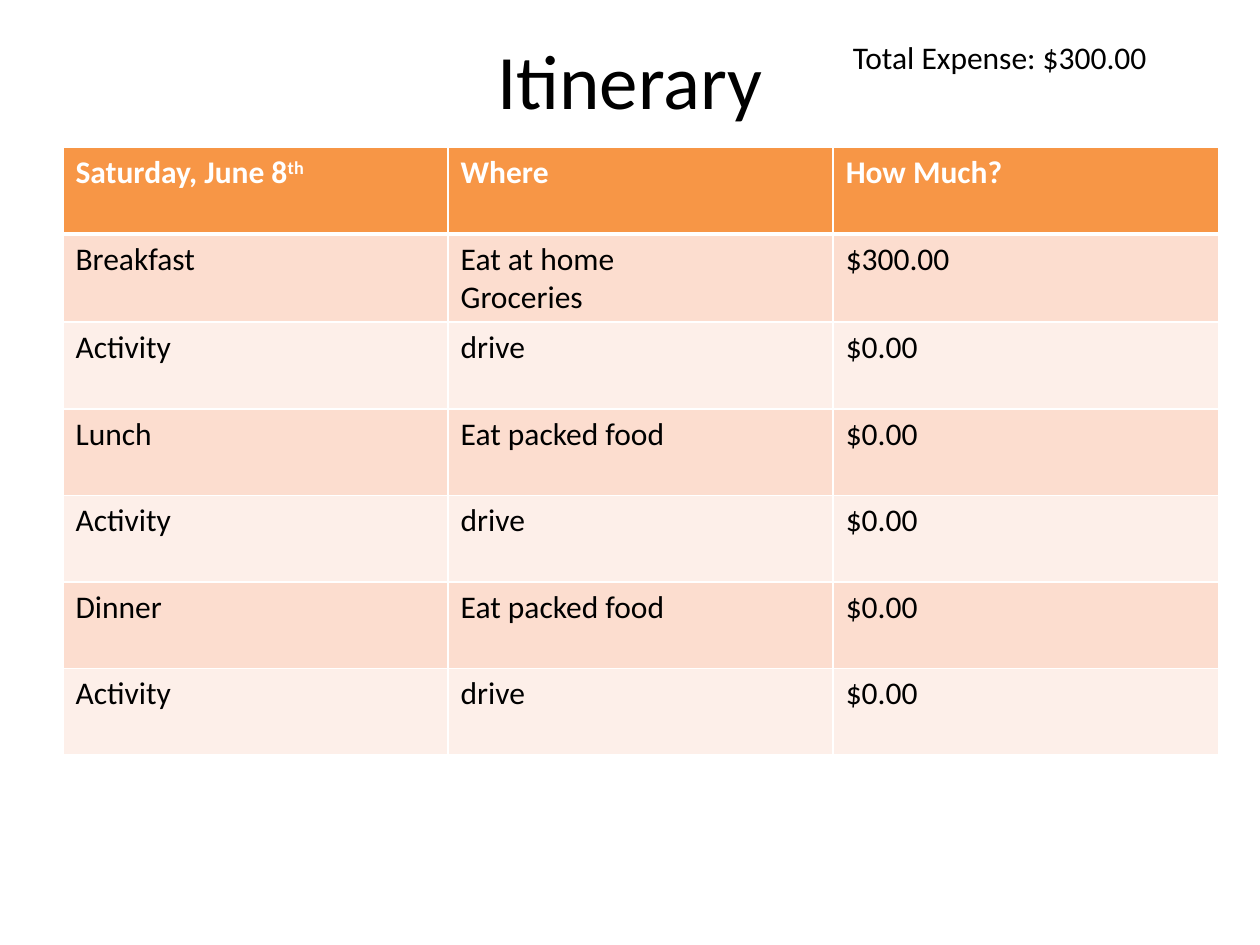
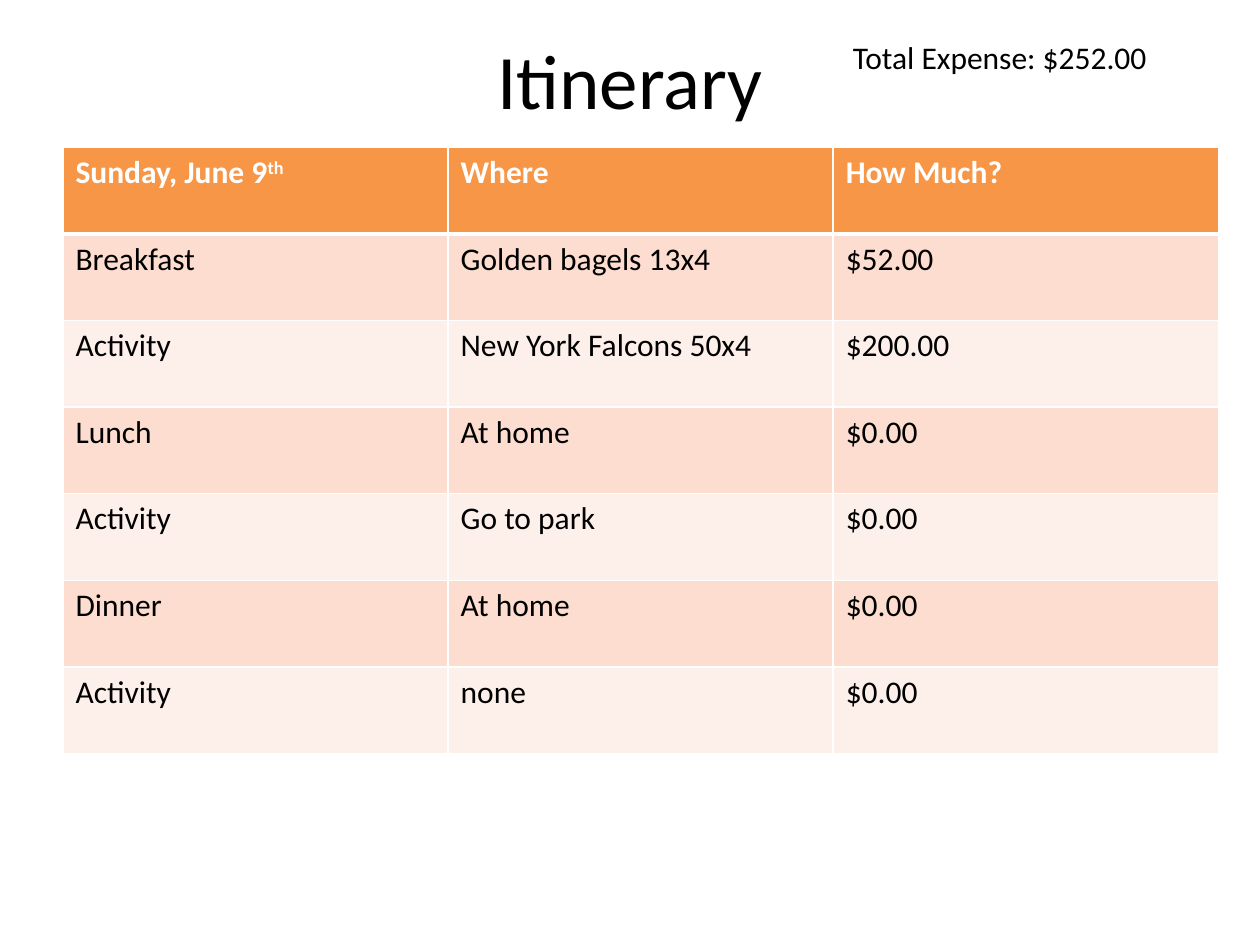
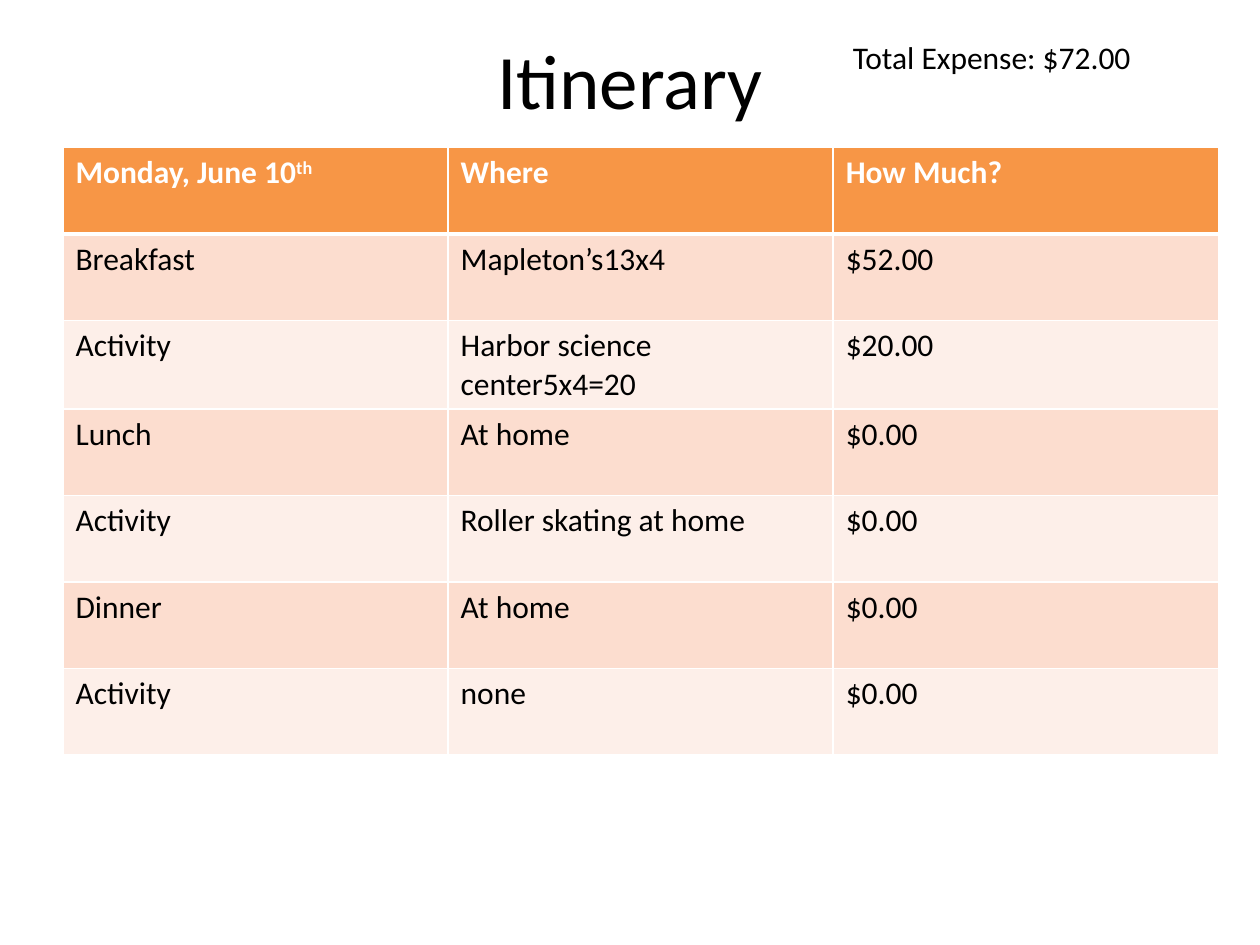
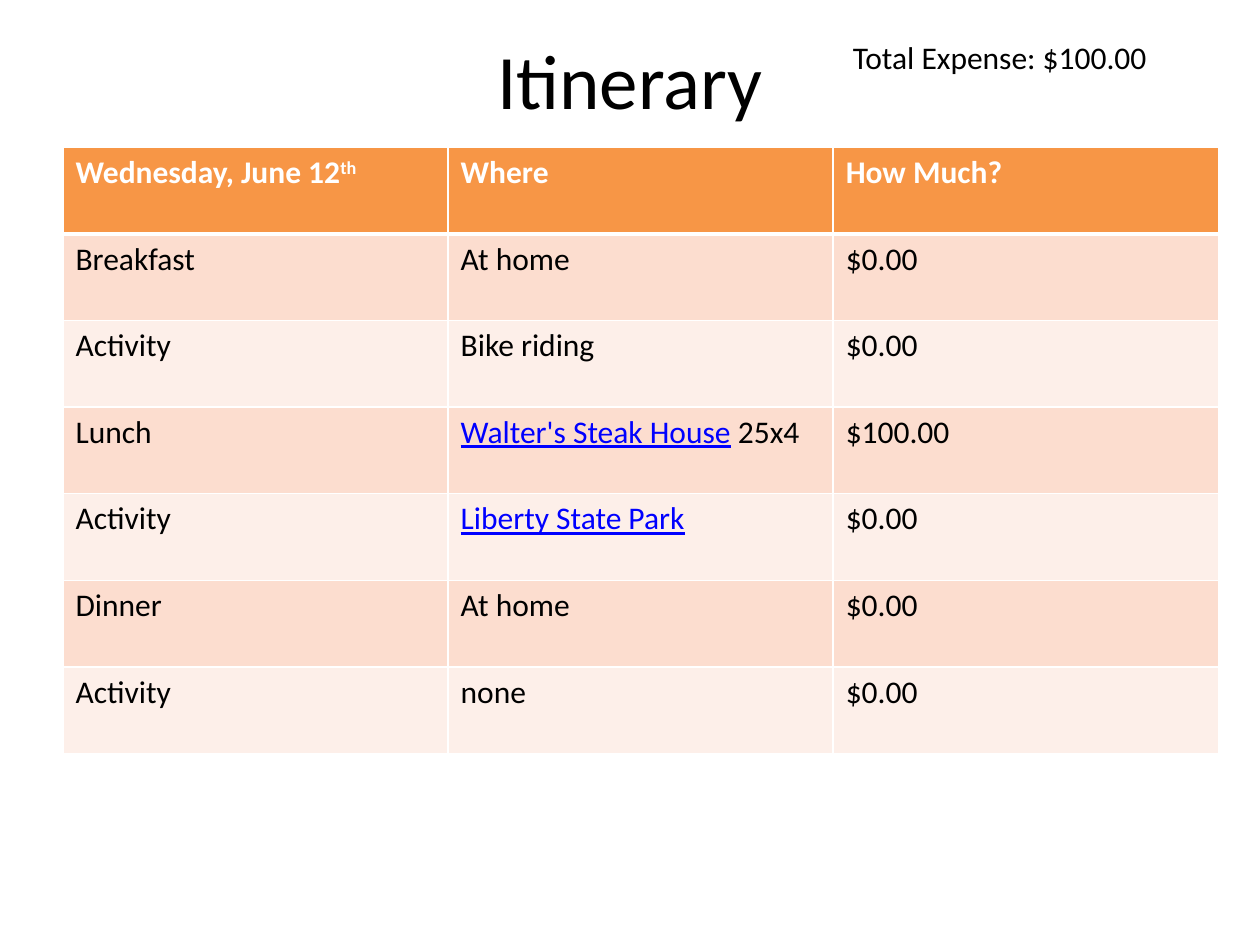
from dataclasses import dataclass

from lxml.etree import SubElement
from pptx import Presentation
from pptx.dml.color import RGBColor
from pptx.enum.text import MSO_ANCHOR, MSO_AUTO_SIZE, PP_ALIGN
from pptx.oxml.ns import qn
from pptx.util import Emu, Pt

BLACK = RGBColor(0x00, 0x00, 0x00)
WHITE = RGBColor(0xFF, 0xFF, 0xFF)
ORANGE = RGBColor(0xF7, 0x96, 0x46)
PEACH = RGBColor(0xFC, 0xDD, 0xCF)
PALE = RGBColor(0xFD, 0xEF, 0xE9)
LINK_BLUE = RGBColor(0x00, 0x00, 0xFF)

FONT = "Calibri"
EMU_PER_PX = 9144
BLANK_LAYOUT = 6
SLOTS = ("Breakfast", "Activity", "Lunch", "Activity", "Dinner", "Activity")


@dataclass(frozen=True)
class Box:
    left: int
    top: int
    width: int
    height: int

    def emu(self) -> tuple[Emu, ...]:
        return tuple(px(n) for n in (self.left, self.top, self.width, self.height))


@dataclass(frozen=True)
class Run:
    text: str
    size: int = 18
    color: RGBColor = BLACK
    bold: bool = False
    underline: bool = False
    raised: bool = False


@dataclass(frozen=True)
class Stop:
    where: tuple[tuple[Run, ...], ...]
    cost: int = 0


@dataclass(frozen=True)
class Day:
    date: str
    stops: tuple[Stop, ...]


TITLE_BOX = Box(50, 0, 900, 125)
TOTAL_BOX = Box(667, 25, 308, 40)
TABLE_BOX = Box(50, 117, 917, 481)


def px(n: int) -> Emu:
    return Emu(n * EMU_PER_PX)


def money(amount: int) -> str:
    return f"${amount}.00"


def plain(*lines: str, cost: int = 0) -> Stop:
    return Stop(tuple((Run(line),) for line in lines), cost)


def linked(name: str, tail: str = "", cost: int = 0) -> Stop:
    runs = (Run(name, color=LINK_BLUE, underline=True),)
    return Stop((runs + (Run(tail),) if tail else runs,), cost)


DAYS = (
    Day("Saturday, June 8", (
        plain("Eat at home", "Groceries", cost=300),
        plain("drive"),
        plain("Eat packed food"),
        plain("drive"),
        plain("Eat packed food"),
        plain("drive"),
    )),
    Day("Sunday, June 9", (
        plain("Golden bagels 13x4", cost=52),
        plain("New York Falcons 50x4", cost=200),
        plain("At home"),
        plain("Go to park"),
        plain("At home"),
        plain("none"),
    )),
    Day("Monday, June 10", (
        plain("Mapleton’s13x4", cost=52),
        plain("Harbor science center5x4=20", cost=20),
        plain("At home"),
        plain("Roller skating at home"),
        plain("At home"),
        plain("none"),
    )),
    Day("Wednesday, June 12", (
        plain("At home"),
        plain("Bike riding"),
        linked("Walter's Steak House", " 25x4", cost=100),
        linked("Liberty State Park"),
        plain("At home"),
        plain("none"),
    )),
)


def add_run(p, run: Run) -> None:
    r = p.add_run()
    r.text = run.text
    r.font.name = FONT
    r.font.size = Pt(run.size)
    r.font.bold = run.bold
    r.font.underline = run.underline
    r.font.color.rgb = run.color
    if run.raised:
        r._r.get_or_add_rPr().set("baseline", "30000")


def write(tf, paragraphs: tuple[tuple[Run, ...], ...]) -> None:
    for i, runs in enumerate(paragraphs):
        p = tf.paragraphs[0] if i == 0 else tf.add_paragraph()
        for run in runs:
            add_run(p, run)


def add_text(slide, box: Box, run: Run):
    tf = slide.shapes.add_textbox(*box.emu()).text_frame
    tf.word_wrap = True
    write(tf, ((run,),))
    return tf


def set_borders(cell, top: int, bottom: int) -> None:
    tcPr = cell._tc.get_or_add_tcPr()
    sides = (("L", 1), ("R", 1), ("T", top), ("B", bottom))
    for i, (side, width) in enumerate(sides):
        ln = SubElement(tcPr, qn(f"a:ln{side}"), w=str(Pt(width)))
        fill = SubElement(ln, qn("a:solidFill"))
        SubElement(fill, qn("a:srgbClr"), val=str(WHITE))
        tcPr.insert(i, ln)


def table_rows(day: Day) -> list[tuple]:
    date, ordinal, where, cost = (
        Run(text, color=WHITE, bold=True, raised=text == "th")
        for text in (day.date, "th", "Where", "How Much?")
    )
    rows = [(((date, ordinal),), ((where,),), ((cost,),))]
    for slot, stop in zip(SLOTS, day.stops):
        rows.append((((Run(slot),),), stop.where, ((Run(money(stop.cost)),),)))
    return rows


def add_itinerary_table(slide, day: Day) -> None:
    rows = table_rows(day)
    columns = len(rows[0])
    table = slide.shapes.add_table(len(rows), columns, *TABLE_BOX.emu()).table
    for column in table.columns:
        column.width = px(TABLE_BOX.width) // columns
    for i, row in enumerate(rows):
        table.rows[i].height = px(TABLE_BOX.height) // len(rows)
        color = ORANGE if i == 0 else PEACH if i % 2 else PALE
        for j, paragraphs in enumerate(row):
            cell = table.cell(i, j)
            cell.fill.solid()
            cell.fill.fore_color.rgb = color
            set_borders(cell, top=3 if i == 1 else 1, bottom=3 if i == 0 else 1)
            write(cell.text_frame, paragraphs)


def add_day_slide(prs, day: Day) -> None:
    slide = prs.slides.add_slide(prs.slide_layouts[BLANK_LAYOUT])
    slide.background.fill.solid()
    slide.background.fill.fore_color.rgb = WHITE

    title = add_text(slide, TITLE_BOX, Run("Itinerary", size=44))
    title.vertical_anchor = MSO_ANCHOR.MIDDLE
    title.paragraphs[0].alignment = PP_ALIGN.CENTER

    spent = sum(stop.cost for stop in day.stops)
    total = add_text(slide, TOTAL_BOX, Run(f"Total Expense: {money(spent)}"))
    total.auto_size = MSO_AUTO_SIZE.SHAPE_TO_FIT_TEXT

    add_itinerary_table(slide, day)


def main() -> None:
    prs = Presentation()
    prs.slide_width, prs.slide_height = px(1000), px(750)
    for day in DAYS:
        add_day_slide(prs, day)
    prs.save("out.pptx")


if __name__ == "__main__":
    main()
